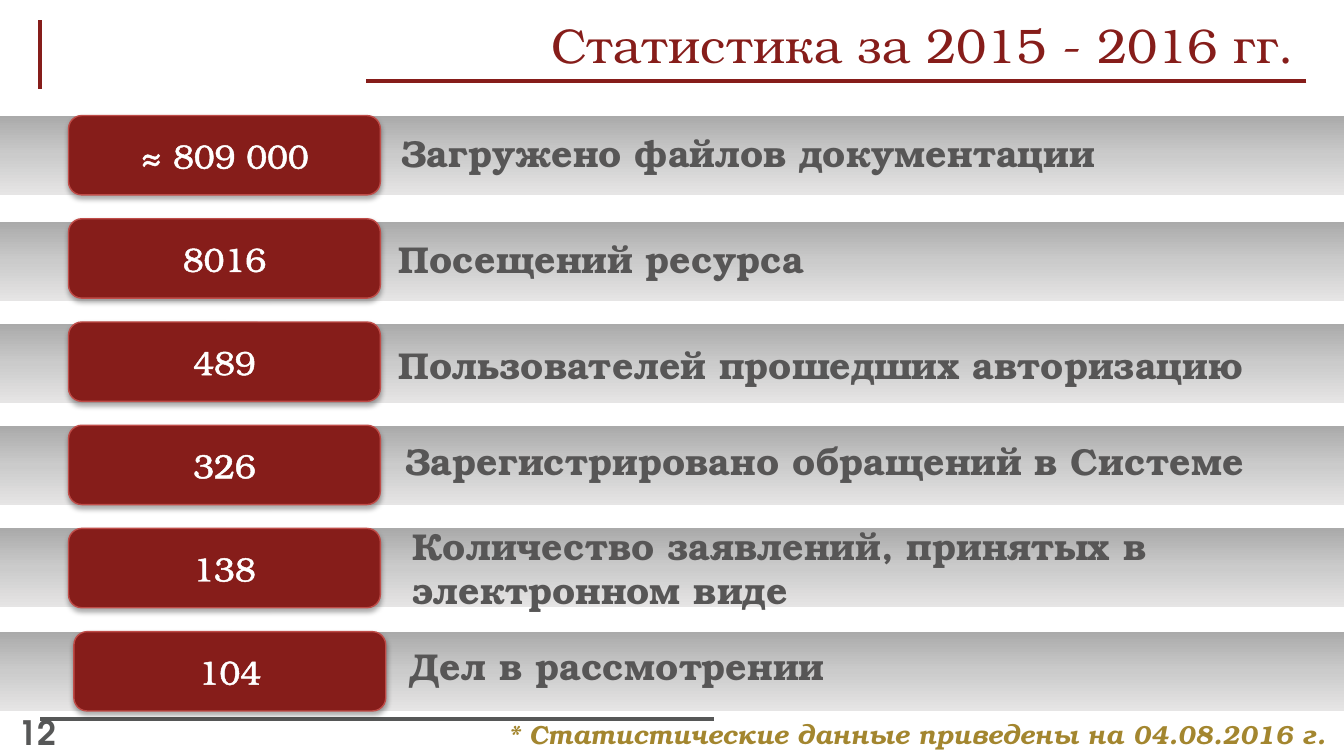
from dataclasses import dataclass, field

from lxml.etree import SubElement
from pptx import Presentation
from pptx.dml.color import RGBColor
from pptx.enum.shapes import MSO_CONNECTOR as Connector
from pptx.enum.shapes import MSO_SHAPE as Shape
from pptx.enum.text import MSO_ANCHOR as Anchor
from pptx.enum.text import PP_ALIGN as Align
from pptx.oxml.ns import qn
from pptx.util import Inches, Pt

COLOURS = {
    "wine": "861D1A",
    "rim": "BF4C48",
    "rule": "565757",
    "caption": "575656",
    "gold": "A3862F",
    "white": "FFFFFF",
    "black": "000000",
    "band_top": "AAAAAA",
    "band_middle": "CBCBCB",
    "band_bottom": "E6E5E5",
}
SERIF = "TeX Gyre Bonum"
SANS = "TeX Gyre Adventor"
CELL = Inches(0.1)
COLUMNS, ROWS = 100, 56.25
FIRST_ROW, PITCH, BAR = 8.6, 7.68, 5.9


def cells(*counts):
    return [round(count * CELL) for count in counts]


def element(parent, tag, **attributes):
    return SubElement(parent, qn(tag), {key: str(value) for key, value in attributes.items()})


def colour(name):
    return RGBColor.from_string(COLOURS[name])


@dataclass
class StatisticsPage:
    deck: object = field(default_factory=Presentation)
    page: object = None

    def __post_init__(self):
        self.deck.slide_width, self.deck.slide_height = cells(COLUMNS, ROWS)
        self.page = self.deck.slides.add_slide(self.deck.slide_layouts[6])

    def rule(self, start, end, tint):
        line = self.page.shapes.add_connector(Connector.STRAIGHT, *cells(*start, *end))
        line.line.color.rgb = colour(tint)
        line.line.width = Pt(2.25)
        element(line._element.spPr, "a:effectLst")

    def add_words(self, box, text, size, tint, font=SERIF, align=Align.LEFT, bold=False, italic=False):
        box.text_frame.word_wrap = True
        para = box.text_frame.paragraphs[0]
        para.alignment = align
        span = para.add_run()
        span.text = text
        span.font.name = font
        span.font.size = Pt(size)
        span.font.bold = bold
        span.font.italic = italic
        span.font.color.rgb = colour(tint)
        return span

    def text(self, place, text, size, tint, **style):
        box = self.page.shapes.add_textbox(*cells(*place))
        box.text_frame.vertical_anchor = Anchor.TOP
        self.add_words(box, text, size, tint, **style)

    def band(self, top):
        band = self.page.shapes.add_shape(Shape.RECTANGLE, *cells(0, top, COLUMNS, BAR))
        band.shadow.inherit = False
        band.line.fill.background()
        band.fill.gradient()
        gradient = band._element.spPr.find(qn("a:gradFill"))
        for child in list(gradient):
            gradient.remove(child)
        stops = element(gradient, "a:gsLst")
        for share, tint in ((0, "band_top"), (50, "band_middle"), (100, "band_bottom")):
            stop = element(stops, "a:gs", pos=share * 1000)
            element(stop, "a:srgbClr", val=COLOURS[tint])
        element(gradient, "a:lin", ang=90 * 60000, scaled=0)

    def badge(self, left, top, number):
        badge = self.page.shapes.add_shape(Shape.ROUNDED_RECTANGLE, *cells(left, top, 23.2, BAR))
        badge.fill.solid()
        badge.fill.fore_color.rgb = colour("wine")
        badge.line.color.rgb = colour("rim")
        badge.line.width = Pt(0.75)
        badge.shadow.inherit = False
        effects = badge._element.spPr.find(qn("a:effectLst"))
        shadow = element(effects, "a:outerShdw", blurRad=Pt(3.1), dist=Pt(1.8),
                         dir=90 * 60000, rotWithShape=0)
        shade = element(shadow, "a:srgbClr", val=COLOURS["black"])
        element(shade, "a:alpha", val=35000)
        badge.text_frame.vertical_anchor = Anchor.MIDDLE
        span = self.add_words(badge, number, 18, "white", align=Align.CENTER)
        properties = span._r.get_or_add_rPr()
        outline = element(properties, "a:ln", w=Pt(1.45))
        element(element(outline, "a:solidFill"), "a:srgbClr", val=COLOURS["white"])
        properties.insert(0, outline)


STATISTICS = [
    ("≈ 809 000", 5.1, 8.6, "Загружено файлов документации", (28.9, 9.2)),
    ("8016", 5.1, 16.5, "Посещений ресурса", (28.7, 17.1)),
    ("489", 5.1, 24.1, "Пользователей прошедших авторизацию", (28.7, 25)),
    ("326", 5.1, 31.7, "Зарегистрировано обращений в Системе", (29.2, 32.1)),
    ("138", 5.1, 39.3, "Количество заявлений, принятых в электронном виде", (29.7, 38.4)),
    ("104", 5.5, 47, "Дел в рассмотрении", (29.5, 47.4)),
]


def main():
    slide = StatisticsPage()
    slide.rule((3, 1.5), (3, 6.6), "wine")
    slide.rule((3, 53.5), (53.1, 53.5), "rule")
    slide.rule((97.2, 6), (27.2, 6), "wine")
    for _, _, band_top, _, _ in STATISTICS:
        slide.band(band_top)
    slide.text((31.9, 0.6, 65.4, 4.2), "Статистика за 2015 - 2016 гг.", 26, "wine", align=Align.RIGHT)
    for row, (number, left, _, caption, corner) in enumerate(STATISTICS):
        slide.badge(left, FIRST_ROW + row * PITCH, number)
        width, height = (70.3, 7.7) if len(caption) > 40 else (67.8, 4.4)
        slide.text((*corner, width, height), caption, 20, "caption", bold=True)
    slide.text((29.5, 53, 70.1, 3.4), "* Статистические данные приведены на 04.08.2016 г.", 14,
               "gold", align=Align.RIGHT, bold=True, italic=True)
    slide.text((0.4, 52.5, 6.3, 2.8), "12", 18, "rule", font=SANS, bold=True)
    slide.deck.save("out.pptx")


if __name__ == "__main__":
    main()
